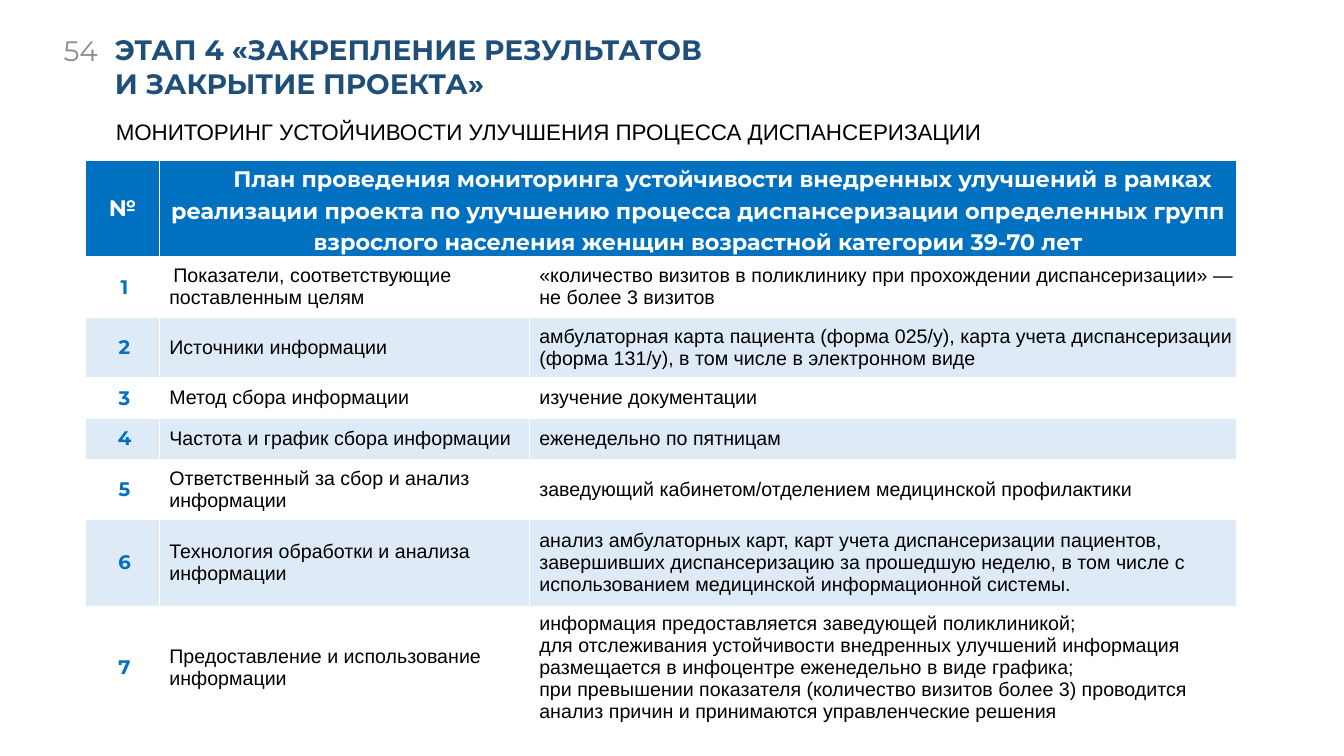
from lxml.etree import SubElement
from pptx import Presentation
from pptx.dml.color import RGBColor
from pptx.enum.text import MSO_ANCHOR, PP_ALIGN
from pptx.oxml.ns import qn
from pptx.util import Inches, Pt

BLUE, BAND, WHITE, BLACK = "0070C0", "DEEBF7", "FFFFFF", "000000"
COLUMN_WIDTHS = (0.73, 3.67, 7.02)
ROW_HEIGHTS = (0.84, 0.6, 0.6, 0.4, 0.41, 0.59, 0.87, 1.09)
HEADING = (
    "План проведения мониторинга устойчивости внедренных улучшений в рамках "
    "реализации проекта по улучшению процесса диспансеризации определенных групп "
    "взрослого населения женщин возрастной категории 39-70 лет"
)
PLAN = (
    ("Показатели, соответствующие поставленным целям",
     ["«количество визитов в поликлинику при прохождении диспансеризации» — "
      "не более 3 визитов"]),
    ("Источники информации",
     ["амбулаторная карта пациента (форма 025/у), карта учета диспансеризации "
      "(форма 131/у), в том числе в электронном виде"]),
    ("Метод сбора информации", ["изучение документации"]),
    ("Частота и график сбора информации", ["еженедельно по пятницам"]),
    ("Ответственный за сбор и анализ информации",
     ["заведующий кабинетом/отделением медицинской профилактики"]),
    ("Технология обработки и анализа информации",
     ["анализ амбулаторных карт, карт учета диспансеризации пациентов, "
      "завершивших диспансеризацию за прошедшую неделю, в том числе с "
      "использованием медицинской информационной системы."]),
    ("Предоставление и использование информации",
     ["информация предоставляется заведующей поликлиникой;",
      "для отслеживания устойчивости внедренных улучшений информация "
      "размещается в инфоцентре еженедельно в виде графика;",
      "при превышении показателя (количество визитов более 3) проводится "
      "анализ причин и принимаются управленческие решения"]),
)


def rgb(value):
    """Turn a hex string into a colour."""
    return RGBColor.from_string(value)


def write(frame, paragraphs, size=14, font="Arial", color=BLACK, bold=False,
          align=PP_ALIGN.LEFT, left=0, indent=0, spacing=None):
    """Fill a text frame with equally formatted paragraphs."""
    for index, text in enumerate(paragraphs):
        para = frame.add_paragraph() if index else frame.paragraphs[0]
        para.text = text
        para.alignment = align
        para.line_spacing = spacing
        properties = para._p.get_or_add_pPr()
        properties.set("marL", str(Inches(left)))
        properties.set("indent", str(Inches(indent)))
        for span in para.runs:
            span.font.size = Pt(size)
            span.font.name = font
            span.font.bold = bold
            span.font.color.rgb = rgb(color)


def add_text(page, place, text, anchor=MSO_ANCHOR.MIDDLE, wrap=True, **style):
    """Add a text box at the given place in inches."""
    box = page.shapes.add_textbox(*map(Inches, place))
    box.text_frame.word_wrap = wrap
    box.text_frame.vertical_anchor = anchor
    write(box.text_frame, [text], **style)


def add_borders(cell):
    """Draw thin white lines on all sides of a cell."""
    properties = cell._tc.get_or_add_tcPr()
    for position, side in enumerate(("lnL", "lnR", "lnT", "lnB")):
        line = SubElement(properties, qn(f"a:{side}"), w=str(Pt(1)))
        fill = SubElement(line, qn("a:solidFill"))
        SubElement(fill, qn("a:srgbClr"), val=WHITE)
        properties.insert(position, line)


def fill_cell(cell, paragraphs, fill=None, **style):
    """Format one table cell and write its text."""
    cell.margin_left = cell.margin_right = Inches(0.02)
    cell.margin_top = cell.margin_bottom = Inches(0.02)
    cell.vertical_anchor = MSO_ANCHOR.MIDDLE
    if fill:
        cell.fill.solid()
        cell.fill.fore_color.rgb = rgb(fill)
    else:
        cell.fill.background()
    add_borders(cell)
    write(cell.text_frame, paragraphs, **style)


def add_plan(page):
    """Add the monitoring plan table."""
    frame = page.shapes.add_table(
        len(ROW_HEIGHTS), len(COLUMN_WIDTHS), Inches(0.85), Inches(1.59),
        Inches(sum(COLUMN_WIDTHS)), Inches(sum(ROW_HEIGHTS)))
    table = frame.table
    table.first_row = table.horz_banding = False
    for column, width in zip(table.columns, COLUMN_WIDTHS):
        column.width = Inches(width)
    for row, height in zip(table.rows, ROW_HEIGHTS):
        row.height = Inches(height)

    label = {"font": "Montserrat", "bold": True, "align": PP_ALIGN.CENTER}
    header = {"fill": BLUE, "size": 16, "color": WHITE, **label}
    table.cell(0, 1).merge(table.cell(0, 2))
    fill_cell(table.cell(0, 0), ["№"], **header)
    fill_cell(table.cell(0, 1), [HEADING], indent=0.49, spacing=1.15, **header)
    for number, (topic, details) in enumerate(PLAN, 1):
        fill = None if number % 2 else BAND
        fill_cell(table.cell(number, 0), [str(number)], fill, color=BLUE,
                  left=0.04, **label)
        fill_cell(table.cell(number, 1), [topic], fill, left=0.08,
                  indent=0.04 if number == 1 else 0)
        fill_cell(table.cell(number, 2), details, fill, left=0.08)


def main():
    """Build the slide and save it."""
    deck = Presentation()
    deck.slide_width, deck.slide_height = Inches(13.33), Inches(7.5)
    page = deck.slides.add_slide(deck.slide_layouts[6])
    add_text(page, (0, 0.23, 1.07, 0.54), "54", size=20, font="Montserrat",
             color="8B8B8B", align=PP_ALIGN.RIGHT)
    add_plan(page)
    add_text(page, (1.05, 1.12, 8.94, 0.37),
             "МОНИТОРИНГ УСТОЙЧИВОСТИ УЛУЧШЕНИЯ ПРОЦЕССА ДИСПАНСЕРИЗАЦИИ",
             anchor=MSO_ANCHOR.TOP, wrap=False, size=16)
    add_text(page, (1.04, 0.39, 11.04, 0.54),
             "ЭТАП 4 «ЗАКРЕПЛЕНИЕ РЕЗУЛЬТАТОВ\nИ ЗАКРЫТИЕ ПРОЕКТА»",
             size=20, font="Montserrat", color="1F4E79", bold=True)
    deck.save("out.pptx")


if __name__ == "__main__":
    main()
